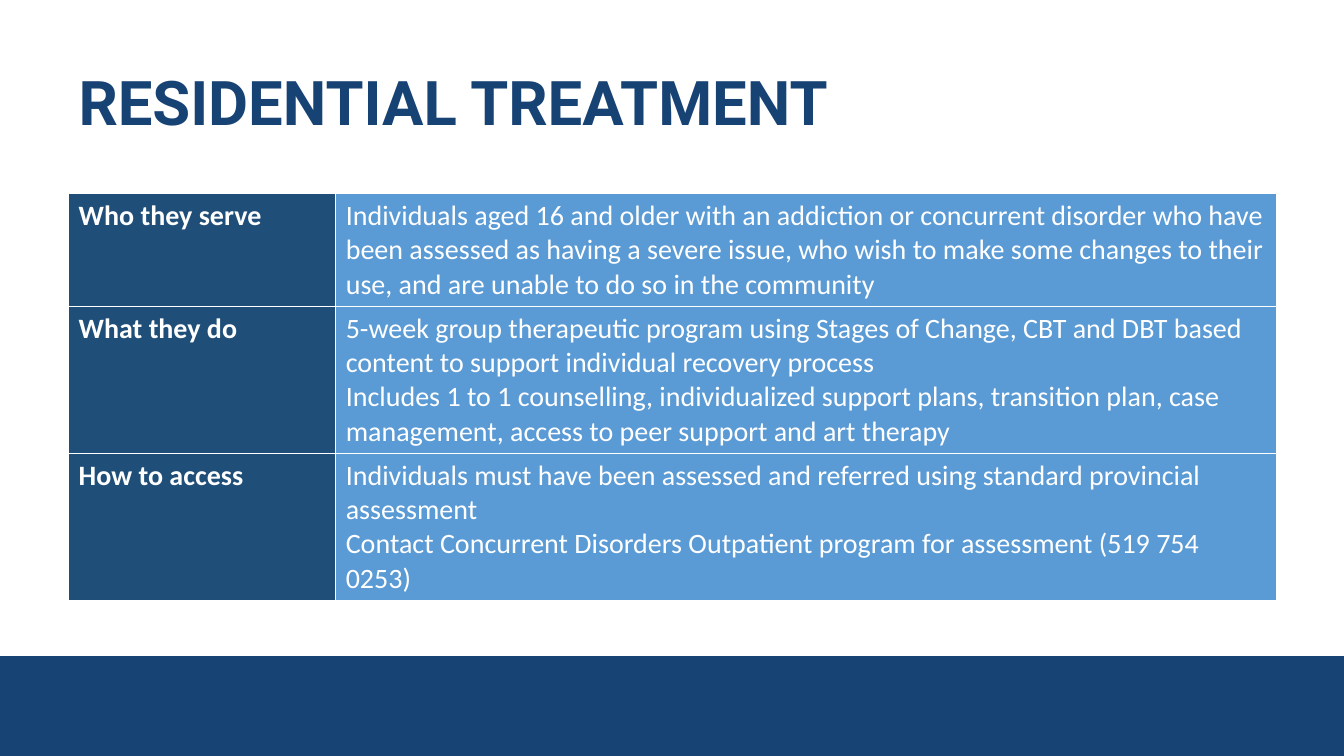
from lxml import etree
from pptx import Presentation
from pptx.dml.color import RGBColor
from pptx.enum import shapes, text
from pptx.oxml import ns
from pptx.util import Pt

NAVY = RGBColor(0x17, 0x42, 0x74)
LABEL_BLUE = RGBColor(0x1F, 0x4E, 0x79)
DETAIL_BLUE = RGBColor(0x5B, 0x9B, 0xD5)
WHITE = RGBColor(0xFF, 0xFF, 0xFF)

LEFT, WIDTH = Pt(49), Pt(862.5)
COLUMN_WIDTHS = [Pt(190.8), Pt(671.7)]
ROW_HEIGHTS = [Pt(80.5), Pt(105), Pt(105)]

ROWS = [
    ("Who they serve", [
        "Individuals aged 16 and older with an addiction or concurrent disorder who have been "
        "assessed as having a severe issue, who wish to make some changes to their use, and "
        "are unable to do so in the community",
    ]),
    ("What they do", [
        "5-week group therapeutic program using Stages of Change, CBT and DBT based content "
        "to support individual recovery process",
        "Includes 1 to 1 counselling, individualized support plans, transition plan, case "
        "management, access to peer support and art therapy",
    ]),
    ("How to access", [
        "Individuals must have been assessed and referred using standard provincial assessment",
        "Contact Concurrent Disorders Outpatient program for assessment (519 754 0253)",
    ]),
]


def add_span(para, words, font, size, color, bold):
    span = para.add_run()
    span.text = words
    span.font.name = font
    span.font.size = Pt(size)
    span.font.bold = bold
    span.font.color.rgb = color


def add_borders(cell, color, width):
    properties = cell._tc.get_or_add_tcPr()
    for place, side in enumerate(["lnL", "lnR", "lnT", "lnB"]):
        line = etree.Element(ns.qn("a:" + side), w=str(width))
        fill = etree.SubElement(line, ns.qn("a:solidFill"))
        etree.SubElement(fill, ns.qn("a:srgbClr"), val=str(color))
        properties.insert(place, line)


deck = Presentation()
deck.slide_width, deck.slide_height = Pt(960), Pt(540)
page = deck.slides.add_slide(deck.slide_layouts[6])

# Footer band
band = page.shapes.add_shape(shapes.MSO_SHAPE.RECTANGLE, 0, Pt(468.75), Pt(960), Pt(71.25))
band.shadow.inherit = False
band.fill.solid()
band.fill.fore_color.rgb = NAVY
band.line.fill.background()

# Title
box = page.shapes.add_textbox(LEFT, Pt(28.75), WIDTH, Pt(93))
box.text_frame.word_wrap = True
box.text_frame.vertical_anchor = text.MSO_ANCHOR.MIDDLE
para = box.text_frame.paragraphs[0]
para.line_spacing = 0.9
add_span(para, "RESIDENTIAL TREATMENT", "Roboto", 44, NAVY, True)

# Program table
frame = page.shapes.add_table(len(ROWS), 2, LEFT, Pt(138.5), WIDTH, sum(ROW_HEIGHTS))
table = frame.table
for column, width in zip(table.columns, COLUMN_WIDTHS):
    column.width = width

for row, height, (label, details) in zip(table.rows, ROW_HEIGHTS, ROWS):
    row.height = height
    contents = [([label], LABEL_BLUE, True), (details, DETAIL_BLUE, False)]
    for cell, (lines, color, bold) in zip(row.cells, contents):
        cell.fill.solid()
        cell.fill.fore_color.rgb = color
        add_borders(cell, WHITE, Pt(1))
        for number, words in enumerate(lines):
            para = cell.text_frame.add_paragraph() if number else cell.text_frame.paragraphs[0]
            add_span(para, words, "Calibri", 20, WHITE, bold)

deck.save("out.pptx")
